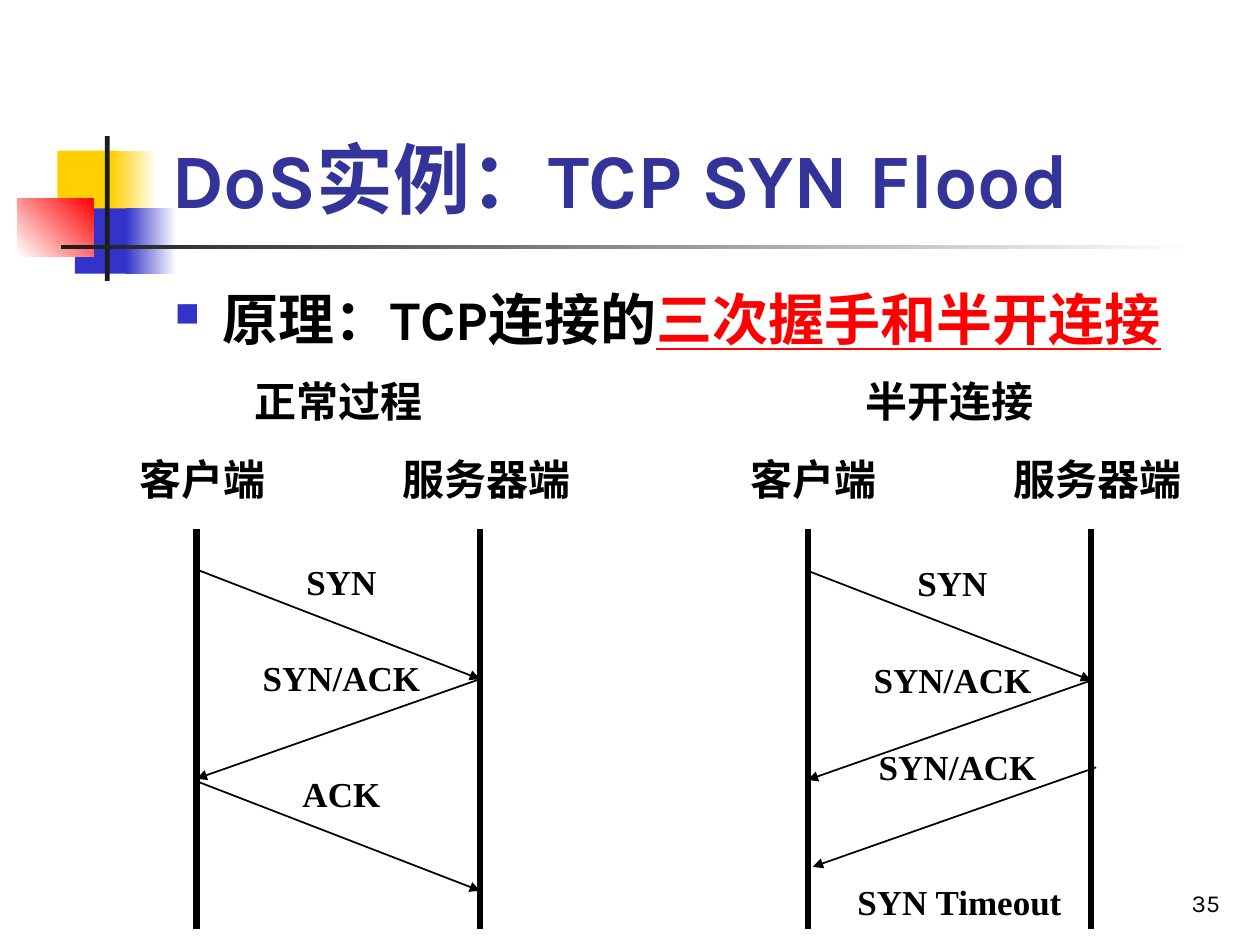
from collections import namedtuple

from lxml import etree
from pptx import Presentation
from pptx import util as u
from pptx.dml.color import RGBColor
from pptx.enum import shapes, text
from pptx.oxml.ns import qn

BLACK = RGBColor(0x00, 0x00, 0x00)
WHITE = RGBColor(0xFF, 0xFF, 0xFF)
CHARCOAL = RGBColor(0x1C, 0x1C, 0x1C)
YELLOW = RGBColor(0xFF, 0xCF, 0x01)
BLUE = RGBColor(0x33, 0x33, 0xCC)
NAVY = RGBColor(0x33, 0x33, 0x99)
RED = RGBColor(0xFF, 0x00, 0x00)

HEADLINE_FONT, DIAGRAM_FONT = "Karla", "Times New Roman"
CELL = 0.25  # the slide is a grid of 40 columns by 30 rows
COLUMNS, ROWS = 40, 30

Box = namedtuple("Box", "left top width height")

# Label widths in columns
SIGNAL_WIDTH = {"SYN": 3.04, "ACK": 3.28, "SYN/ACK": 5.8, "SYN Timeout": 7.32}


def cells(count):
    return u.Inches(count * CELL)


def within(area, left, top, width, height):
    """Turn shares of an area into a box on the grid."""
    return Box(area.left + left * area.width, area.top + top * area.height,
               width * area.width, height * area.height)


def add_text(slide, box, runs, size, font=HEADLINE_FONT, bold=True, wrap=True,
             align=text.PP_ALIGN.LEFT, anchor=text.MSO_ANCHOR.TOP):
    """Place one paragraph; runs are (words, colour, underlined)."""
    frame = slide.shapes.add_textbox(*map(cells, box)).text_frame
    frame.word_wrap = wrap
    frame.vertical_anchor = anchor
    paragraph = frame.paragraphs[0]
    paragraph.alignment = align
    for words, colour, underlined in runs:
        run = paragraph.add_run()
        run.text = words
        run.font.name = font
        run.font.size = u.Pt(size)
        run.font.bold = bold
        run.font.underline = underlined
        run.font.color.rgb = colour
    return paragraph


def add_label(slide, centre, top, words, width, size):
    box = Box(centre - width / 2, top, width, size / 12)
    add_text(slide, box, [(words, BLACK, False)], size, font=DIAGRAM_FONT,
             wrap=False, align=text.PP_ALIGN.CENTER)


def add_line(slide, start, end, weight, arrow=False):
    line = slide.shapes.add_connector(shapes.MSO_CONNECTOR.STRAIGHT,
                                      *map(cells, start + end))
    line.line.color.rgb = BLACK
    line.line.width = u.Pt(weight)
    if arrow:
        etree.SubElement(line.line._get_or_add_ln(), qn("a:tailEnd"), type="triangle")
    etree.SubElement(line._element.spPr, qn("a:effectLst"))


def add_block(slide, box, colour, fade_to=None, angle=0):
    block = slide.shapes.add_shape(shapes.MSO_SHAPE.RECTANGLE, *map(cells, box))
    block.shadow.inherit = False
    block.line.fill.background()
    if fade_to is None:
        block.fill.solid()
        block.fill.fore_color.rgb = colour
    else:
        block.fill.gradient()
        block.fill.gradient_angle = angle
        for stop, shade in zip(block.fill.gradient_stops, (colour, fade_to)):
            stop.color.rgb = shade


def draw_ornament(slide, area):
    """Coloured blocks crossed by a vertical bar and a long fading rule."""
    for colour, left, top, solid, fade_left, fade in (
            (YELLOW, 0.25, 0.1, 0.38, 0.59, 0.29),
            (BLUE, 0.36, 0.5, 0.37, 0.68, 0.32)):
        add_block(slide, within(area, left, top, solid, 0.45), colour)
        add_block(slide, within(area, fade_left, top, fade, 0.45), colour, WHITE)
    add_block(slide, within(area, 0, 0.43, 0.48, 0.4), WHITE, RED, angle=45)
    add_block(slide, within(area, 0.55, 0, 0.03, 1), CHARCOAL)
    add_block(slide, within(area, 0.27, 0.75, 7.14, 0.03), CHARCOAL, WHITE)


def write_title(slide, area):
    add_text(slide, area, [("DoS实例：TCP SYN Flood", NAVY, False)], 44,
             anchor=text.MSO_ANCHOR.BOTTOM)


def write_principle(slide, area):
    principle = add_text(slide, area, [("原理：TCP连接的", BLACK, False),
                                       ("三次握手和半开连接", RED, True)], 32)
    principle.space_before = u.Pt(6.4)
    # Square bullet with a hanging indent
    props = principle._p.get_or_add_pPr()
    props.set("marL", str(cells(1.5)))
    props.set("indent", str(-cells(1.5)))
    bullet_colour = etree.SubElement(props, qn("a:buClr"))
    etree.SubElement(bullet_colour, qn("a:srgbClr"), val=str(BLUE))
    etree.SubElement(props, qn("a:buSzPct"), val="60000")
    etree.SubElement(props, qn("a:buChar"), char="■")


def draw_exchange(slide, area, heading, messages, outcome=None):
    """Two lifelines; messages are (signal, row, to_server, shift)."""
    client, server = area.left, area.left + area.width
    middle = area.left + area.width / 2

    # Heading and the two parties
    for words, centre, row in ((heading, middle, 0),
                               ("客户端", client + 0.2, 2.48),
                               ("服务器端", server + 0.2, 2.48)):
        add_label(slide, centre, area.top + row, words,
                  width=0.84 + 1.33 * len(words), size=24)
    for party in (client, server):
        add_line(slide, (party, area.top + 5.08),
                 (party, area.top + area.height), 3.5)

    # Signals between the parties
    for signal, row, to_server, shift in messages:
        sender, receiver = (client, server) if to_server else (server, client)
        drop, lift = (3.48, 0.48) if to_server else (3.16, 0.9)
        start = area.top + row
        add_line(slide, (sender + shift, start),
                 (receiver + shift, start + drop), 1, arrow=True)
        add_label(slide, middle + 0.1 + shift, start - lift, signal,
                  SIGNAL_WIDTH[signal], size=20)
    if outcome:
        add_label(slide, middle + 0.32, area.top + 16.04, outcome,
                  SIGNAL_WIDTH[outcome], size=20)


def write_number(slide, area):
    add_text(slide, area, [("35", BLACK, False)], 14, bold=False,
             align=text.PP_ALIGN.RIGHT, anchor=text.MSO_ANCHOR.BOTTOM)


def main():
    deck = Presentation()
    deck.slide_width, deck.slide_height = cells(COLUMNS), cells(ROWS)
    slide = deck.slides.add_slide(deck.slide_layouts[6])

    draw_ornament(slide, Box(0.56, 4.32, 5.04, 4.6))
    write_number(slide, Box(30.8, 27.32, 8.32, 2))
    write_principle(slide, Box(5.16, 8.84, 34, 18))
    write_title(slide, Box(5.04, 0.92, 34.08, 6.4))
    draw_exchange(slide, Box(6.24, 11.72, 9, 17.76), "正常过程",
                  [("SYN", 6.36, True, 0), ("SYN/ACK", 9.84, False, 0),
                   ("ACK", 13.08, True, 0)])
    draw_exchange(slide, Box(25.64, 11.72, 9, 17.76), "半开连接",
                  [("SYN", 6.4, True, 0), ("SYN/ACK", 9.88, False, 0),
                   ("SYN/ACK", 12.64, False, 0.16)], outcome="SYN Timeout")

    deck.save("out.pptx")


if __name__ == "__main__":
    main()
